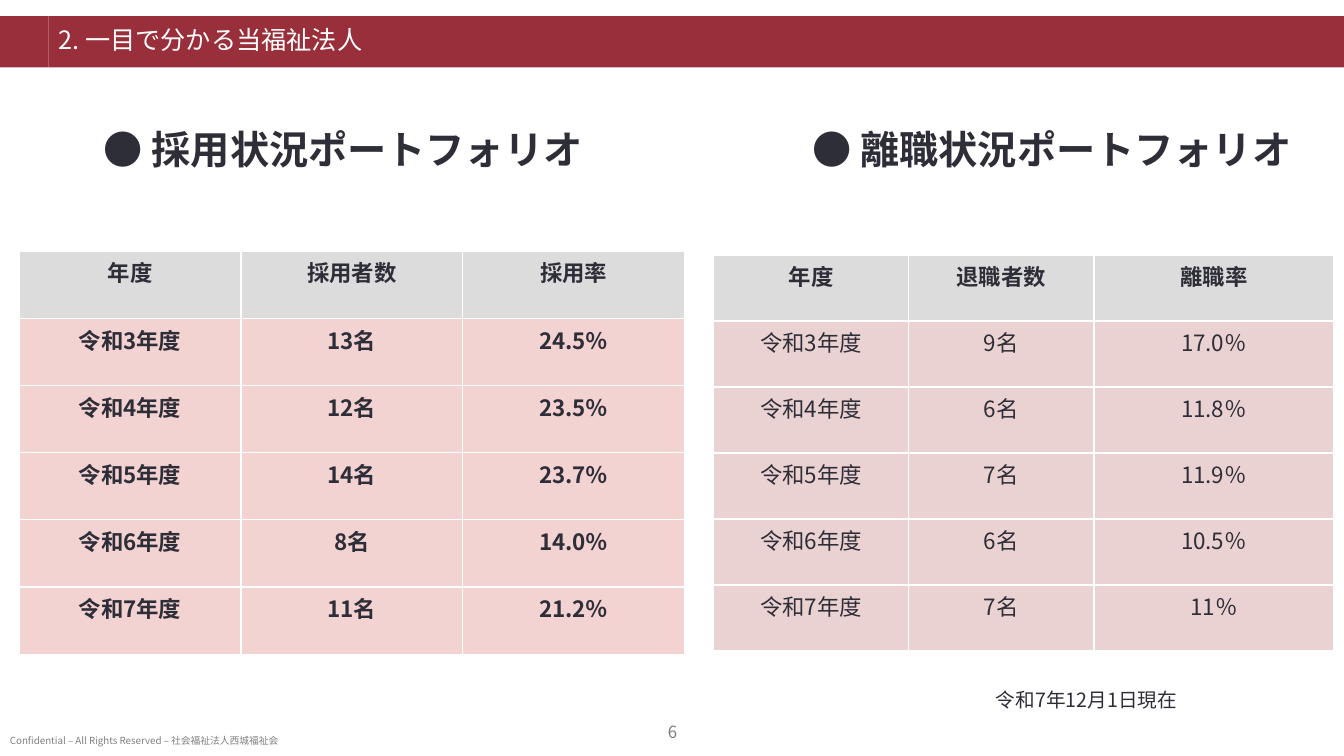
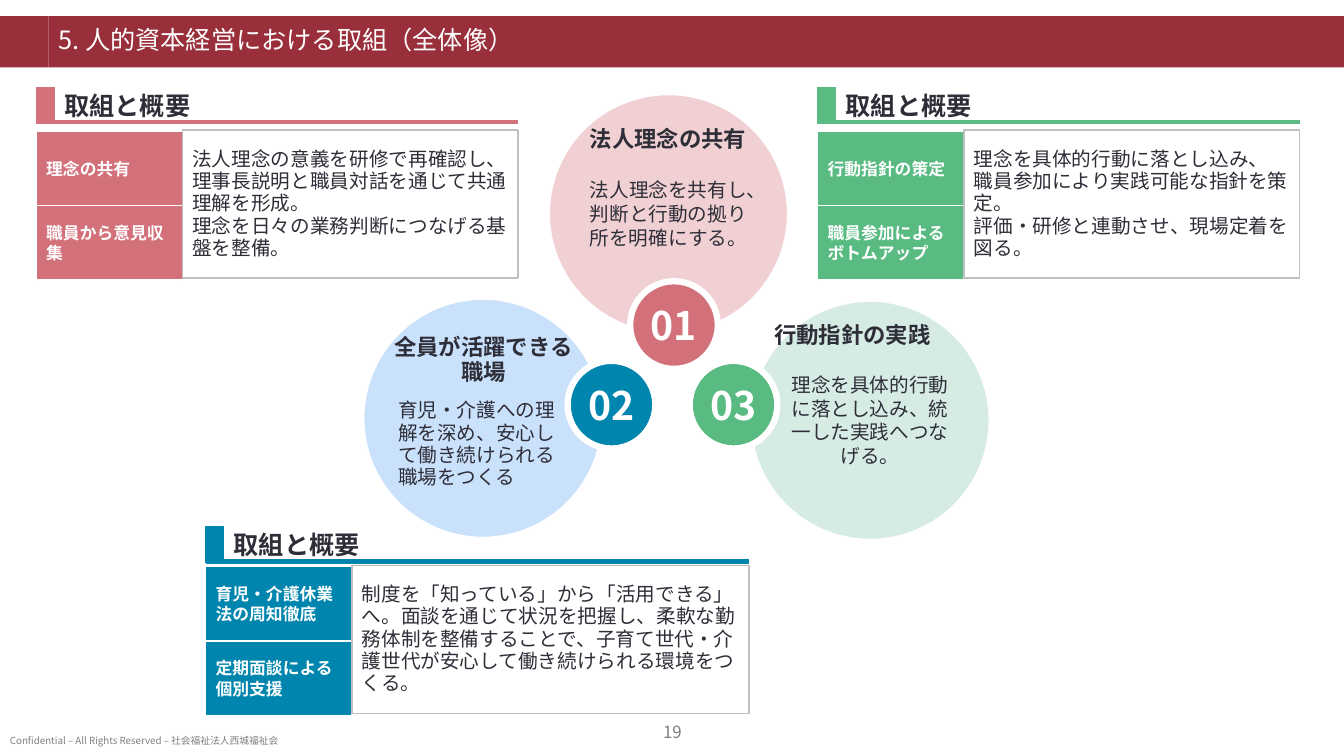
from copy import deepcopy

from lxml.etree import SubElement
from pptx import Presentation
from pptx.dml.color import RGBColor
from pptx.enum.shapes import MSO_CONNECTOR as Connector, MSO_SHAPE as Shape
from pptx.enum.text import MSO_ANCHOR as Anchor, MSO_AUTO_SIZE as AutoSize, PP_ALIGN as Align
from pptx.oxml.ns import qn
from pptx.util import Inches, Pt

FONT = "Noto Sans CJK JP"
INK = RGBColor(0x2E, 0x2E, 0x38)
WHITE = RGBColor(0xFF, 0xFF, 0xFF)
BAND = RGBColor(0x99, 0x2F, 0x3A)
FOOTER_GRAY = RGBColor(0x80, 0x80, 0x80)
NUMBER_GRAY = RGBColor(0x7E, 0x7E, 0x80)
BOX_GRAY = RGBColor(0xBF, 0xBF, 0xBF)
HEADER_GRAY = RGBColor(0xDC, 0xDC, 0xDC)
HIRED_PINK = RGBColor(0xF3, 0xD2, 0xD2)
LEFT_PINK = RGBColor(0xEB, 0xD2, 0xD2)
ROSE = RGBColor(0xD3, 0x71, 0x7B)
GREEN = RGBColor(0x59, 0xBB, 0x81)
BLUE = RGBColor(0x00, 0x86, 0xAE)
PALE_ROSE = RGBColor(0xF0, 0xD0, 0xD3)
PALE_GREEN = RGBColor(0xD5, 0xEB, 0xE4)
PALE_BLUE = RGBColor(0xCA, 0xE1, 0xFC)

MIDDLE = {"vertical_anchor": Anchor.MIDDLE}
NO_MARGINS = {"margin_left": 0, "margin_right": 0, "margin_top": 0, "margin_bottom": 0}
CENTER = {"alignment": Align.CENTER}
LEFT = {"alignment": Align.LEFT}
PROSE = {"line_spacing": 0.95, "space_after": Pt(6)}

FOOTER = "Confidential – All Rights Reserved – 社会福祉法人西城福祉会"
YEARS = ["令和3年度", "令和4年度", "令和5年度", "令和6年度", "令和7年度"]
PORTFOLIOS = [
    {
        "heading": "● 採用状況ポートフォリオ",
        "heading_box": (0.93, 1.19, 6.67, 0.57),
        "table_box": (0.19, 2.49, 6.6, 4),
        "widths": [2.2, 2.2, 2.2],
        "header": ("年度", "採用者数", "採用率"),
        "counts": ["13名", "12名", "14名", "8名", "11名"],
        "rates": ["24.5％", "23.5％", "23.7％", "14.0％", "21.2％"],
        "fill": HIRED_PINK,
        "bold": True,
    },
    {
        "heading": "● 離職状況ポートフォリオ",
        "heading_box": (7.96, 1.19, 5.09, 0.57),
        "table_box": (7.08, 2.53, 6.15, 3.93),
        "widths": [1.93, 1.84, 2.38],
        "header": ("年度", "退職者数", "離職率"),
        "counts": ["9名", "6名", "7名", "6名", "7名"],
        "rates": ["17.0％", "11.8％", "11.9％", "10.5％", "11％"],
        "fill": LEFT_PINK,
        "bold": False,
    },
]
AS_OF = "令和7年12月1日現在"

# Large circles: left, top, fill, text
CIRCLES = [
    (5.45, 0.94, PALE_ROSE, "法人理念を共有し、判断と行動の拠り所を明確にする。"),
    (7.45, 2.99, PALE_GREEN, "理念を具体的行動に落とし込み、統一した実践へつなげる。"),
    (3.61, 2.97, PALE_BLUE, ""),
]
BADGES = [
    (6.25, 2.79, ROSE, "01"),
    (6.84, 3.58, GREEN, "03"),
    (5.63, 3.58, BLUE, "02"),
]
CIRCLE_HEADINGS = [
    ((5.58, 1.21, 2.09, 0.36), "法人理念の共有"),
    ((3.75, 3.27, 2.09, 0.61), "全員が活躍できる職場"),
    ((7.23, 3.16, 2.45, 0.36), "行動指針の実践"),
]
WORKPLACE_BOX = (3.85, 3.92, 1.78, 1)
WORKPLACE_TEXT = "育児・介護への理解を深め、安心して働き続けられる職場をつくる"

PANEL_HEADING = "取組と概要"
# Panels: left, heading top, labels top, width, colour, labels, body
PANELS = [
    (0.36, 0.87, 1.3, 4.78, ROSE, ["理念の共有", "職員から意見収集"],
     "法人理念の意義を研修で再確認し、\n理事長説明と職員対話を通じて共通理解を形成。\n"
     "理念を日々の業務判断につなげる基盤を整備。"),
    (8.11, 0.87, 1.3, 4.78, GREEN, ["行動指針の策定", "職員参加によるボトムアップ"],
     "理念を具体的行動に落とし込み、\n職員参加により実践可能な指針を策定。\n"
     "評価・研修と連動させ、現場定着を図る。"),
    (2.04, 5.23, 5.62, 5.39, BLUE, ["育児・介護休業法の周知徹底", "定期面談による個別支援"],
     "制度を「知っている」から「活用できる」へ。面談を通じて状況を把握し、"
     "柔軟な勤務体制を整備することで、子育て世代・介護世代が安心して働き続けられる環境をつくる。"),
]
LABEL_WIDTH, LABEL_HEIGHT = 1.45, 0.74


def set_all(target, values):
    for name, value in values.items():
        setattr(target, name, value)


def inches(box):
    return [Inches(value) for value in box]


def write(frame, text, size, color=INK, bold=False, paragraph_format=LEFT):
    """Fill a text frame with one paragraph, in the same font for Latin and Japanese."""
    paragraph = frame.paragraphs[0]
    paragraph.text = text
    set_all(paragraph, paragraph_format)
    for run in paragraph.runs:
        set_all(run.font, {"size": Pt(size), "bold": bold, "name": FONT})
        run.font.color.rgb = color
        SubElement(run.font._element, qn("a:ea"), typeface=FONT)
    for line_break in paragraph._p.findall(qn("a:br")):
        line_break.insert(0, deepcopy(paragraph.runs[0].font._element))


def add_text(slide, box, text, size, frame_format=None, **text_format):
    frame = slide.shapes.add_textbox(*inches(box)).text_frame
    set_all(frame, {"word_wrap": True, **(frame_format or {})})
    write(frame, text, size, **text_format)


def add_block(slide, kind, box, fill=None, line=None, line_width=1.0):
    shape = slide.shapes.add_shape(kind, *inches(box))
    shape.shadow.inherit = False
    if fill is None:
        shape.fill.background()
    else:
        shape.fill.solid()
        shape.fill.fore_color.rgb = fill
    if line is None:
        shape.line.fill.background()
    else:
        shape.line.color.rgb = line
        shape.line.width = Pt(line_width)
    set_all(shape.text_frame, {"word_wrap": True, **MIDDLE})
    return shape


def add_slide(presentation, title_text, number):
    """Add a slide with the title band, footer and page number."""
    slide = presentation.slides.add_slide(presentation.slide_layouts[5])
    add_block(slide, Shape.RECTANGLE, (0, 0.16, 0.48, 0.51), BAND)
    title = slide.shapes.title
    set_all(title, dict(zip(("left", "top", "width", "height"), inches((0.48, 0.16, 12.85, 0.51)))))
    title.fill.solid()
    title.fill.fore_color.rgb = BAND
    set_all(title.text_frame, {"auto_size": AutoSize.NONE, "word_wrap": True, **MIDDLE})
    write(title.text_frame, title_text, 18, WHITE, paragraph_format={"line_spacing": 0.9, **LEFT})
    add_text(slide, (0, 7.2, 6.41, 0.3), FOOTER, 7, MIDDLE, color=FOOTER_GRAY)
    add_text(slide, (6.41, 7.02, 0.52, 0.48), number, 12, MIDDLE,
             color=NUMBER_GRAY, paragraph_format=CENTER)
    return slide


def add_portfolio(slide, portfolio):
    add_text(slide, portfolio["heading_box"], portfolio["heading"], 28, bold=True)
    rows = [portfolio["header"], *zip(YEARS, portfolio["counts"], portfolio["rates"])]
    widths = portfolio["widths"]
    table = slide.shapes.add_table(len(rows), len(widths), *inches(portfolio["table_box"])).table
    for column, width in zip(table.columns, widths):
        column.width = Inches(width)
    for row_index, row in enumerate(rows):
        is_header = row_index == 0
        for column_index, text in enumerate(row):
            cell = table.cell(row_index, column_index)
            cell.fill.solid()
            cell.fill.fore_color.rgb = HEADER_GRAY if is_header else portfolio["fill"]
            write(cell.text_frame, text, 16, bold=is_header or portfolio["bold"],
                  paragraph_format=CENTER)


def add_circle(slide, left, top, diameter, fill, line_width, text, size, **text_format):
    circle = add_block(slide, Shape.OVAL, (left, top, diameter, diameter), fill, WHITE, line_width)
    set_all(circle.text_frame, NO_MARGINS)
    write(circle.text_frame, text, size, paragraph_format=CENTER, **text_format)


def add_panel(slide, left, top, labels_top, width, color, labels, body):
    rule_y = top + 0.34
    rule = slide.shapes.add_connector(
        Connector.STRAIGHT, *inches((left, rule_y, left + width, rule_y)))
    rule.line.color.rgb = color
    rule.line.width = Pt(3)
    SubElement(rule._element.spPr, qn("a:effectLst"))
    add_block(slide, Shape.RECTANGLE, (left, top, 0.18, 0.35), color, color)
    add_text(slide, (left + 0.18, top, 2, 0.35), PANEL_HEADING, 18, MIDDLE, bold=True)
    for index, text in enumerate(labels):
        box = (left, labels_top + index * LABEL_HEIGHT, LABEL_WIDTH, LABEL_HEIGHT)
        label = add_block(slide, Shape.RECTANGLE, box, color, WHITE)
        write(label.text_frame, text, 12, WHITE, bold=True)
    body_box = (left + LABEL_WIDTH, labels_top - 0.01, width - LABEL_WIDTH, 1.47)
    body_shape = add_block(slide, Shape.RECTANGLE, body_box, line=BOX_GRAY)
    write(body_shape.text_frame, body, 14, paragraph_format={**PROSE, **LEFT})


def build_portfolio_slide(presentation):
    slide = add_slide(presentation, "2. 一目で分かる当福祉法人", "6")
    for portfolio in PORTFOLIOS:
        add_portfolio(slide, portfolio)
    add_text(slide, (8.64, 6.78, 4.27, 0.34), AS_OF, 14, paragraph_format=CENTER)


def build_overview_slide(presentation):
    slide = add_slide(presentation, "5. 人的資本経営における取組（全体像）", "19")
    for left, top, fill, text in CIRCLES:
        add_circle(slide, left, top, 2.36, fill, 0.75, text, 14)
    for left, top, fill, text in BADGES:
        add_circle(slide, left, top, 0.87, fill, 4.5, text, 28, color=WHITE, bold=True)
    for box, text in CIRCLE_HEADINGS:
        add_text(slide, box, text, 16, bold=True, paragraph_format={**PROSE, **CENTER})
    add_text(slide, WORKPLACE_BOX, WORKPLACE_TEXT, 14, paragraph_format={**PROSE, **LEFT})
    for panel in PANELS:
        add_panel(slide, *panel)


def main():
    presentation = Presentation()
    presentation.slide_width = Inches(13.33)
    presentation.slide_height = Inches(7.5)
    build_portfolio_slide(presentation)
    build_overview_slide(presentation)
    presentation.save("out.pptx")


if __name__ == "__main__":
    main()
